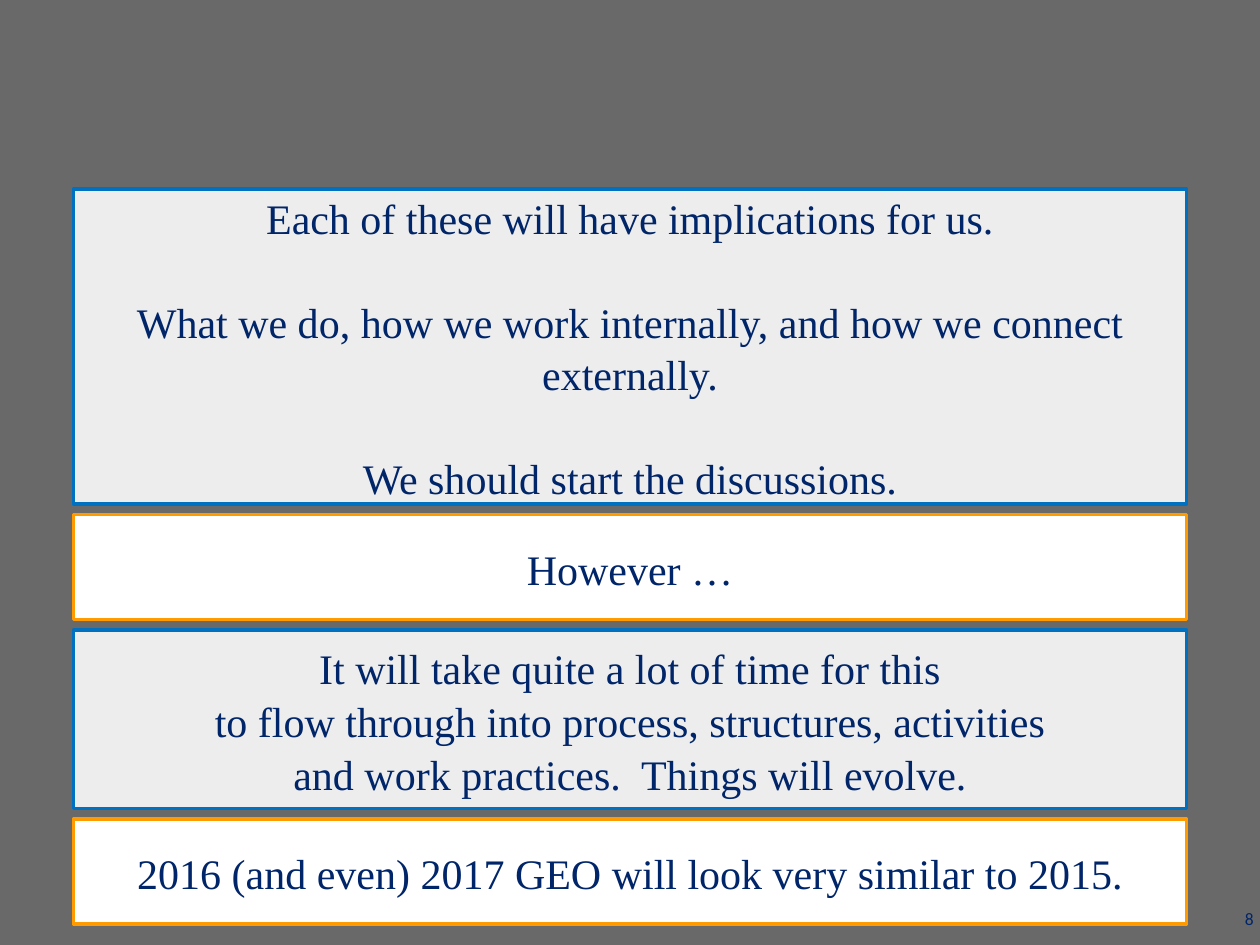
from pptx import Presentation
from pptx.dml.color import RGBColor
from pptx.enum.shapes import MSO_SHAPE
from pptx.enum.text import MSO_ANCHOR, PP_ALIGN
from pptx.util import Emu, Pt

RECTANGLE = MSO_SHAPE.RECTANGLE
TOP, MIDDLE = MSO_ANCHOR.TOP, MSO_ANCHOR.MIDDLE
CENTER, RIGHT = PP_ALIGN.CENTER, PP_ALIGN.RIGHT

GRAY = RGBColor(0x69, 0x69, 0x69)
PALE = RGBColor(0xED, 0xED, 0xED)
WHITE = RGBColor(0xFF, 0xFF, 0xFF)
BLUE = RGBColor(0x00, 0x70, 0xC0)
ORANGE = RGBColor(0xFF, 0x9A, 0x00)
NAVY = RGBColor(0x00, 0x25, 0x69)

EMU_PER_PX = 7620
SLIDE_WIDTH, SLIDE_HEIGHT = 1200, 900
PANEL_GAP = 10
INSET = 6

IMPLICATIONS = [
    "Each of these will have implications for us.",
    "What we do, how we work internally, and how we connect externally.",
    "We should start the discussions.",
]
EVOLUTION = [
    "It will take quite a lot of time for this",
    "to flow through into process, structures, activities",
    "and work practices.  Things will evolve.",
]
OUTLOOK = ["2016 (and even) 2017 GEO will look very similar to 2015."]
PANELS = [
    (300, PALE, BLUE, IMPLICATIONS, 29),
    (100, WHITE, ORANGE, ["However …"], 0),
    (170, PALE, BLUE, EVOLUTION, 0),
    (100, WHITE, ORANGE, OUTLOOK, 0),
]


def px(length):
    """Turn pixels into EMU."""
    return Emu(length * EMU_PER_PX)


def write_text(frame, lines, *, font="Times New Roman", size=24, align=CENTER,
               anchor=MIDDLE, gap=0, spacing=1.05):
    """Write one paragraph per line, with a gap in points between them."""
    frame.word_wrap = True
    frame.vertical_anchor = anchor
    frame.margin_left = frame.margin_right = px(INSET)
    frame.margin_top = frame.margin_bottom = px(INSET)
    for index, line in enumerate(lines):
        paragraph = frame.add_paragraph() if index else frame.paragraphs[0]
        paragraph.text = line
        paragraph.alignment = align
        paragraph.line_spacing = spacing
        if index and gap:
            paragraph.space_before = Pt(gap)
        paragraph.font.name = font
        paragraph.font.size = Pt(size)
        paragraph.font.color.rgb = NAVY


def add_panel(slide, left, top, width, height, fill, outline, lines, gap):
    """Draw one bordered message panel."""
    panel = slide.shapes.add_shape(
        RECTANGLE, px(left), px(top), px(width), px(height))
    panel.shadow.inherit = False
    panel.fill.solid()
    panel.fill.fore_color.rgb = fill
    panel.line.color.rgb = outline
    panel.line.width = Pt(2)
    write_text(panel.text_frame, lines, gap=gap)


def add_panel_stack(slide, left, top, width):
    """Stack the message panels downwards with equal gaps."""
    for height, fill, outline, lines, gap in PANELS:
        add_panel(slide, left, top, width, height, fill, outline, lines, gap)
        top += height + PANEL_GAP


def add_page_number(slide, left, top, width, height):
    """Place the page number at the right of its box."""
    number = slide.shapes.add_textbox(
        px(left), px(top), px(width), px(height))
    write_text(number.text_frame, ["8"], font="Calibri", size=10,
               align=RIGHT, anchor=TOP, spacing=1.0)


def main():
    """Build and save the slide."""
    presentation = Presentation()
    presentation.slide_width = px(SLIDE_WIDTH)
    presentation.slide_height = px(SLIDE_HEIGHT)
    slide = presentation.slides.add_slide(presentation.slide_layouts[6])
    slide.background.fill.solid()
    slide.background.fill.fore_color.rgb = GRAY
    add_page_number(slide, 950, 859, 250, 34)
    add_panel_stack(slide, 70, 180, 1060)
    presentation.save("out.pptx")


if __name__ == "__main__":
    main()
